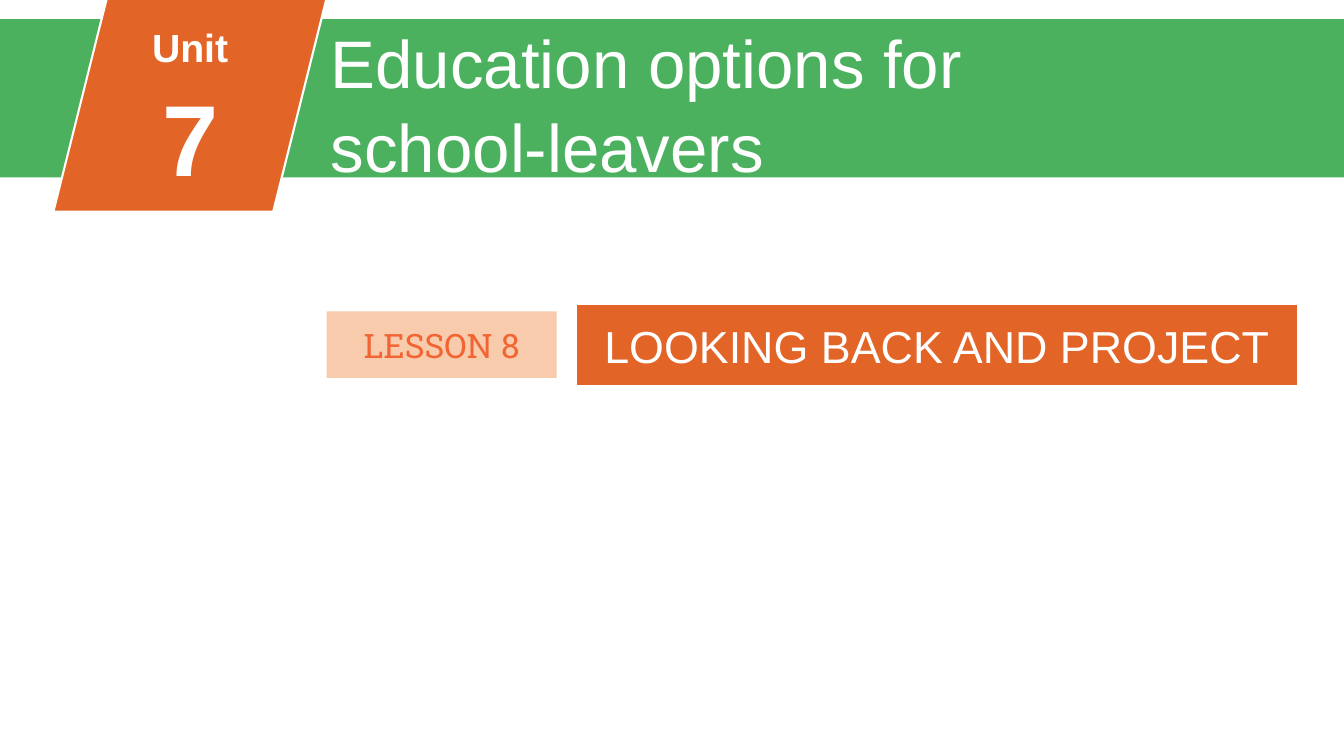
from dataclasses import dataclass

from pptx import Presentation
from pptx.dml.color import RGBColor
from pptx.enum.shapes import MSO_SHAPE as SHAPE
from pptx.enum.text import MSO_ANCHOR as ANCHOR, MSO_AUTO_SIZE as AUTO_SIZE, PP_ALIGN as ALIGN
from pptx.util import Inches, Pt


@dataclass(frozen=True)
class Theme:
    orange: str = "E36427"
    peach: str = "F8CBAD"
    lesson_text: str = "F26532"
    green: str = "4CB15F"
    white: str = "FFFFFF"
    font: str = "Arial"
    lesson_font: str = "Roboto Slab"
    lesson_size: int = 24
    unit_size: int = 28
    topic_size: int = 32
    title_size: int = 48
    number_size: int = 72
    outline: float = 1.5
    line_spacing: float = 1.05


THEME = Theme()


def add_block(slide, kind, box, fill, outlined=False):
    sp = slide.shapes.add_shape(kind, *map(Inches, box))
    sp.shadow.inherit = False
    sp.fill.solid()
    sp.fill.fore_color.rgb = RGBColor.from_string(fill)
    if outlined:
        sp.line.color.rgb = RGBColor.from_string(THEME.white)
        sp.line.width = Pt(THEME.outline)
    else:
        sp.line.fill.background()
    return sp


def write(sp, lines, color=THEME.white, font=THEME.font, bold=False,
          align=ALIGN.CENTER, anchor=ANCHOR.MIDDLE, spacing=1.0):
    """Fill a shape with one paragraph per (text, size) pair."""
    tf = sp.text_frame
    tf.word_wrap = True
    tf.auto_size = AUTO_SIZE.NONE
    tf.vertical_anchor = anchor
    for i, (text, size) in enumerate(lines):
        p = tf.add_paragraph() if i else tf.paragraphs[0]
        p.alignment = align
        p.line_spacing = spacing
        r = p.add_run()
        r.text = text
        r.font.name = font
        r.font.size = Pt(size)
        r.font.bold = bold
        r.font.color.rgb = RGBColor.from_string(color)


def add_lesson_row(slide):
    topic = add_block(slide, SHAPE.RECTANGLE, (5.71, 3.02, 7.17, 0.81), THEME.orange, outlined=True)
    write(topic, [("LOOKING BACK AND PROJECT", THEME.topic_size)])
    lesson = add_block(slide, SHAPE.RECTANGLE, (3.24, 3.09, 2.28, 0.66), THEME.peach)
    write(lesson, [("LESSON 8", THEME.lesson_size)], THEME.lesson_text, THEME.lesson_font)


def add_unit_banner(slide):
    add_block(slide, SHAPE.RECTANGLE, (0, 0.19, 13.33, 1.57), THEME.green)
    add_block(slide, SHAPE.PARALLELOGRAM, (0.53, -0.02, 2.71, 2.12), THEME.orange, outlined=True)
    unit = slide.shapes.add_textbox(*map(Inches, (1.19, 0.19, 1.39, 1.78)))
    write(unit, [("Unit", THEME.unit_size), ("7", THEME.number_size)],
          bold=True, spacing=THEME.line_spacing)


def place_title(slide):
    title = slide.shapes.title
    title.left, title.top, title.width, title.height = map(Inches, (3.18, 0.12, 10.15, 1.72))
    write(title, [("Education options for", THEME.title_size), ("school-leavers", THEME.title_size)],
          align=ALIGN.LEFT, anchor=ANCHOR.TOP, spacing=THEME.line_spacing)
    # Bring the title in front of the banner.
    title.element.getparent().append(title.element)


def main():
    prs = Presentation()
    prs.slide_width, prs.slide_height = Inches(13.33), Inches(7.5)
    slide = prs.slides.add_slide(prs.slide_layouts[5])
    add_lesson_row(slide)
    add_unit_banner(slide)
    place_title(slide)
    prs.save("out.pptx")


if __name__ == "__main__":
    main()
